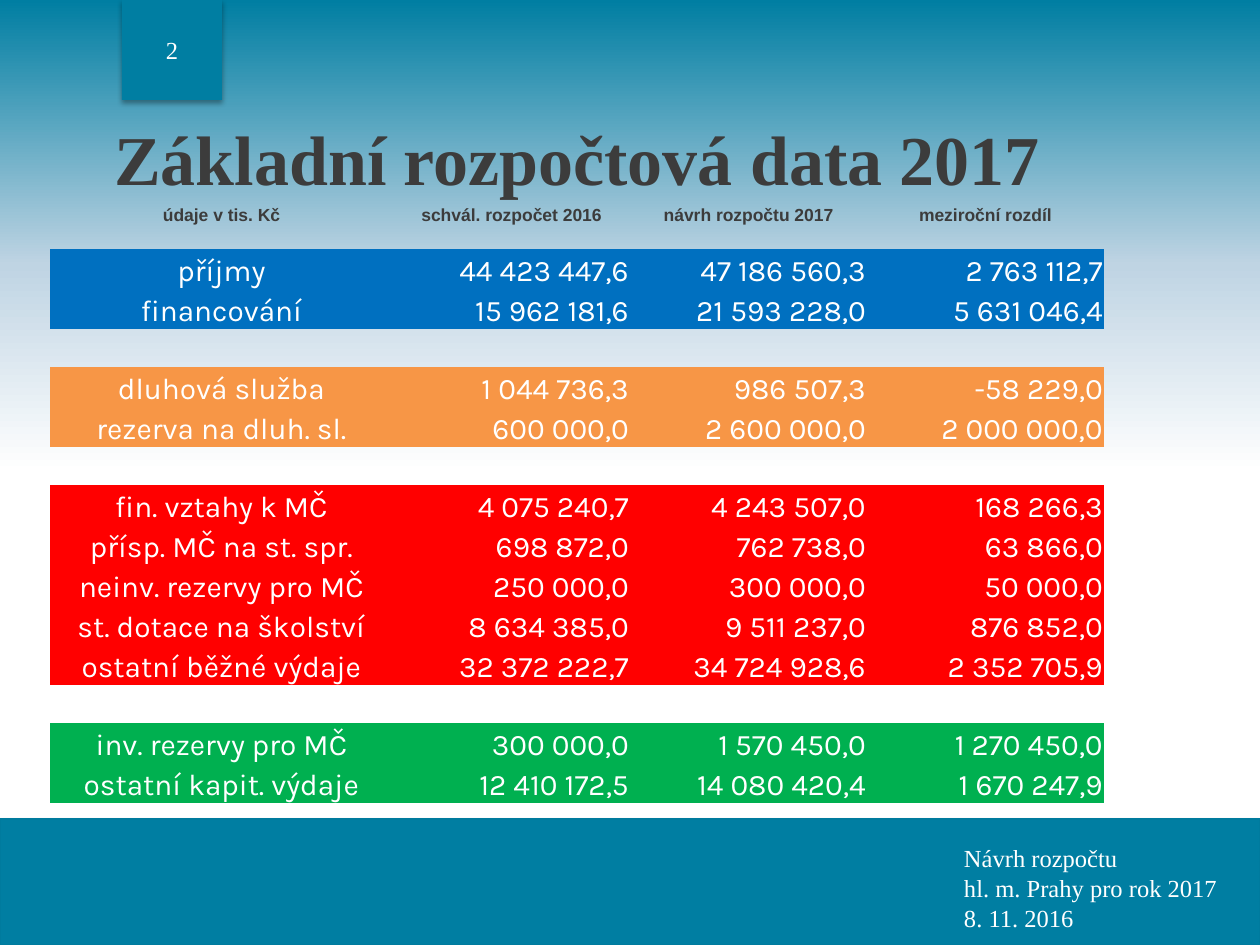
import pptx
import pptx.util
import pptx.dml.color
import pptx.enum.shapes
import pptx.enum.text
import pptx.oxml
import pptx.oxml.ns
from lxml import etree

PX = 914400 / 126  # EMU in one px
THEME = {
    "teal": "007EA2", "teal_edge": "007B9E", "mist": "BFD4E3", "white": "FFFFFF",
    "ink": "3C3C3C", "blue": "0070C0", "orange": "F79646", "red": "FF0000", "green": "00B050",
    "serif": "Times New Roman", "heading": "Arial", "body": "Karla",
    "title_size": 40, "small_size": 14, "heading_size": 10, "body_size": 17,
}
NS = pptx.oxml.ns.nsdecls("a")
qn = pptx.oxml.ns.qn
RGB = pptx.dml.color.RGBColor.from_string
ALIGN = pptx.enum.text.PP_ALIGN
ANCHOR = pptx.enum.text.MSO_ANCHOR


def px(*lengths):
    return [round(length * PX) for length in lengths]


def write(frame, text, size, font, color="white", bold=False, align=ALIGN.LEFT, spacing=None):
    """Fill a text frame; \\n parts paragraphs and \\v breaks a line."""
    frame.word_wrap = True
    for i, line in enumerate(text.split("\n")):
        paragraph = frame.add_paragraph() if i else frame.paragraphs[0]
        paragraph.alignment = align
        if spacing:
            paragraph.line_spacing = pptx.util.Pt(spacing)
        paragraph.text = line
        for run in paragraph.runs:
            run.font.size = pptx.util.Pt(THEME[size])
            run.font.name = THEME[font]
            run.font.bold = bold
            run.font.color.rgb = RGB(THEME[color])
        if not line:  # an empty line keeps its height through its end mark
            etree.SubElement(paragraph._p, qn("a:endParaRPr"), sz=str(THEME[size] * 100))


prs = pptx.Presentation()
prs.slide_width, prs.slide_height = px(1260, 945)
slide = prs.slides.add_slide(prs.slide_layouts[6])

# Background fading from teal to white at half height
background = slide.background.fill
background.gradient()
background.gradient_angle = 270
stops = next(slide._element.iter(qn("a:gsLst")))
for stop in list(stops):
    stops.remove(stop)
for position, color in ((0, "teal"), (28, "mist"), (50, "white")):
    stops.append(pptx.oxml.parse_xml(
        f'<a:gs {NS} pos="{position * 1000}"><a:srgbClr val="{THEME[color]}"/></a:gs>'))

# Page number tab and footer bar, both with a soft shadow
bands = []
for box in ((122, 0, 100, 100), (0, 819, 1260, 126)):
    band = slide.shapes.add_shape(pptx.enum.shapes.MSO_SHAPE.RECTANGLE, *px(*box))
    band.fill.solid()
    band.fill.fore_color.rgb = RGB(THEME["teal"])
    band.line.fill.background()
    band._element.spPr.append(pptx.oxml.parse_xml(
        f'<a:effectLst {NS}><a:outerShdw blurRad="39370" dist="22860" dir="5400000" rotWithShape="0">'
        '<a:srgbClr val="000000"><a:alpha val="35000"/></a:srgbClr></a:outerShdw></a:effectLst>'))
    bands.append(band)
page_tab, footer_bar = bands
footer_bar.line.color.rgb = RGB(THEME["teal_edge"])
footer_bar.line.width = pptx.util.Pt(0.75)

# Page number and footer note
page_number = page_tab.text_frame
footer_note = slide.shapes.add_textbox(*px(964, 843, 296, 102)).text_frame
for frame in (page_number, footer_note):
    frame.margin_left = frame.margin_right = frame.margin_top = frame.margin_bottom = 0
page_number.vertical_anchor = ANCHOR.MIDDLE
write(page_number, "2", size="small_size", font="serif", align=ALIGN.CENTER)
write(footer_note, "Návrh rozpočtu\vhl. m. Prahy pro rok 2017\n8. 11. 2016",
      size="small_size", font="serif", spacing=17)

# Budget figures in coloured groups
headings = ("údaje v tis. Kč", "schvál. rozpočet 2016", "návrh rozpočtu 2017", "meziroční rozdíl")
groups = (
    ("blue", (
        ("příjmy", "44 423 447,6", "47 186 560,3", "2 763 112,7"),
        ("financování", "15 962 181,6", "21 593 228,0", "5 631 046,4"))),
    ("orange", (
        ("dluhová služba", "1 044 736,3", "986 507,3", "-58 229,0"),
        ("rezerva na dluh. sl.", "600 000,0", "2 600 000,0", "2 000 000,0"))),
    ("red", (
        ("fin. vztahy k MČ", "4 075 240,7", "4 243 507,0", "168 266,3"),
        ("přísp. MČ na st. spr.", "698 872,0", "762 738,0", "63 866,0"),
        ("neinv. rezervy pro MČ", "250 000,0", "300 000,0", "50 000,0"),
        ("st. dotace na školství", "8 634 385,0", "9 511 237,0", "876 852,0"),
        ("ostatní běžné výdaje", "32 372 222,7", "34 724 928,6", "2 352 705,9"))),
    ("green", (
        ("inv. rezervy pro MČ", "300 000,0", "1 570 450,0", "1 270 450,0"),
        ("ostatní kapit. výdaje", "12 410 172,5", "14 080 420,4", "1 670 247,9"))),
)

# Table rows as (height, fill, texts, text format)
empty = ("",) * 4
title_format = dict(size="title_size", font="serif", color="ink", bold=True)
heading_format = dict(size="heading_size", font="heading", color="ink", bold=True)
body_format = dict(size="body_size", font="body")
rows = [(91, None, ("Základní rozpočtová data 2017", "", "", ""), title_format),
        (24, None, headings, heading_format)]
for fill, entries in groups:
    rows.append((24 if fill == "blue" else 38, None, empty, heading_format))
    rows += [(40, fill, entry, body_format) for entry in entries]

# Table without style or grid
column_widths = (343, 237, 237, 237)
table_height = sum(row[0] for row in rows)
budget = slide.shapes.add_table(
    len(rows), 4, *px(50, 110, sum(column_widths), table_height)).table
budget.first_row = budget.horz_banding = False
budget._tbl.tblPr.find(qn("a:tableStyleId")).text = "{2D5ABB26-0587-4C30-8999-92F81FD0307C}"
for column, width in zip(budget.columns, px(*column_widths)):
    column.width = width

for r, (height, fill, texts, text_format) in enumerate(rows):
    budget.rows[r].height = px(height)[0]
    for c, text in enumerate(texts):
        cell = budget.cell(r, c)
        cell.margin_left = cell.margin_right = cell.margin_top = px(1)[0]
        cell.margin_bottom = 0
        cell.vertical_anchor = ANCHOR.BOTTOM
        if fill:
            cell.fill.solid()
            cell.fill.fore_color.rgb = RGB(THEME[fill])
        else:
            cell.fill.background()
        write(cell.text_frame, text, **text_format,
              align=ALIGN.RIGHT if fill and c else ALIGN.CENTER)
budget.cell(0, 0).merge(budget.cell(0, 3))

prs.save("out.pptx")
